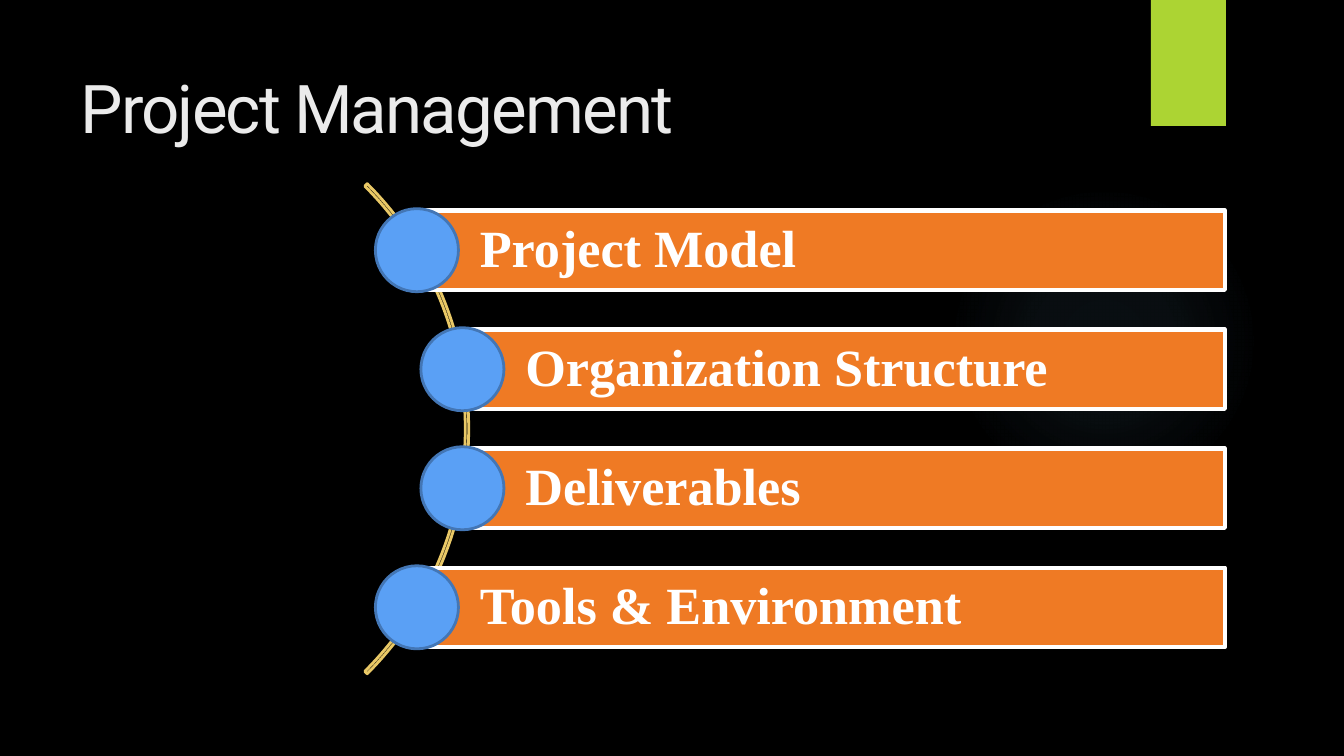
from lxml import etree
from pptx import Presentation
from pptx.dml.color import RGBColor
from pptx.enum.shapes import MSO_SHAPE
from pptx.enum.text import MSO_ANCHOR, MSO_AUTO_SIZE, PP_ALIGN
from pptx.oxml import parse_xml
from pptx.oxml.ns import nsdecls
from pptx.util import Cm, Pt

RECT, OVAL, ARC = MSO_SHAPE.RECTANGLE, MSO_SHAPE.OVAL, MSO_SHAPE.BLOCK_ARC
MIDDLE, LEFT, NO_FIT = MSO_ANCHOR.MIDDLE, PP_ALIGN.LEFT, MSO_AUTO_SIZE.NONE

TITLE = "Project Management"
INNER_X, OUTER_X = 7.88, 8.74
TOPICS = [
    ("Project Model", INNER_X),
    ("Organization Structure", OUTER_X),
    ("Deliverables", OUTER_X),
    ("Tools & Environment", INNER_X),
]
GLOW_STOPS = [(0, 7), (36, 6), (69, 0)]

THEME = {
    "background": "000000", "title": "EBEBEB", "accent": "ACD433", "glow": "7AC4F0",
    "arc": "E9C866", "bar": "EF7A24", "bar_line": "FFFFFF", "bar_text": "FFFFFF",
    "dot": "5AA0F5", "dot_line": "4376B5",
    "title_font": "Roboto", "title_size": 36,
    "bar_font": "Times New Roman", "bar_size": 28,
}

FIRST_Y, PITCH = 4.73, 2.25
BAR_RIGHT, BAR_H = 23.15, 1.5
DOT = 1.57
ARC_X, ARC_SIZE = 2.31, 13.1


def color(name):
    return RGBColor.from_string(THEME[name])


def add_shape(s, kind, x, y, w, h, fill=None, line=None, width=1.5):
    sp = s.shapes.add_shape(kind, Cm(x), Cm(y), Cm(w), Cm(h))
    sp.shadow.inherit = False
    if fill:
        sp.fill.solid()
        sp.fill.fore_color.rgb = color(fill)
    else:
        sp.fill.background()
    if line:
        sp.line.color.rgb = color(line)
        sp.line.width = Pt(width)
    else:
        sp.line.fill.background()
    return sp


def add_glow(s, x, y, size):
    sp = add_shape(s, OVAL, x, y, size, size)
    stops = "".join(
        f'<a:gs pos="{pos * 1000}"><a:srgbClr val="{THEME["glow"]}">'
        f'<a:alpha val="{alpha * 1000}"/></a:srgbClr></a:gs>'
        for pos, alpha in GLOW_STOPS
    )
    gradient = parse_xml(
        f'<a:gradFill {nsdecls("a")}><a:gsLst>{stops}</a:gsLst><a:path path="circle">'
        '<a:fillToRect l="50000" t="50000" r="50000" b="50000"/></a:path></a:gradFill>'
    )
    spPr = sp.fill._xPr
    spPr.replace(spPr.find(etree.QName(gradient.nsmap["a"], "noFill")), gradient)


def style_text(tf, font, size, fill, bold=False):
    tf.word_wrap = True
    tf.auto_size = NO_FIT
    tf.vertical_anchor = MIDDLE
    p = tf.paragraphs[0]
    p.alignment = LEFT
    r = p.runs[0]
    r.font.name = THEME[font]
    r.font.size = Pt(THEME[size])
    r.font.bold = bold
    r.font.color.rgb = color(fill)
    return p


def add_title(s):
    title = s.shapes.title
    title.left, title.top, title.width, title.height = Cm(1.27), Cm(0.8), Cm(21.16), Cm(2.44)
    title.text_frame.text = TITLE
    p = style_text(title.text_frame, "title_font", "title_size", "title")
    p.runs[0].font._element.set("spc", "-100")


def add_arc(s):
    center_y = FIRST_Y + PITCH * (len(TOPICS) - 1) / 2
    arc = add_shape(s, ARC, ARC_X - ARC_SIZE / 2, center_y - ARC_SIZE / 2,
                    ARC_SIZE, ARC_SIZE, line="arc")
    for i, value in enumerate((189, 27, 0.005)):
        arc.adjustments[i] = value


def add_topic(s, text, x, y):
    bar = add_shape(s, RECT, x, y - BAR_H / 2, BAR_RIGHT - x, BAR_H, "bar", "bar_line", 2.25)
    tf = bar.text_frame
    tf.text = text
    tf.margin_left = Cm(1.19)
    tf.margin_top = tf.margin_right = tf.margin_bottom = Cm(0.2)
    p = style_text(tf, "bar_font", "bar_size", "bar_text", bold=True)
    p.line_spacing = 0.9
    add_shape(s, OVAL, x - DOT / 2, y - DOT / 2, DOT, DOT, "dot", "dot_line")


def main():
    prs = Presentation()
    prs.slide_width, prs.slide_height = Cm(25.4), Cm(14.29)
    s = prs.slides.add_slide(prs.slide_layouts[5])
    s.background.fill.solid()
    s.background.fill.fore_color.rgb = color("background")
    add_glow(s, 17.93, 3.51, 5.87)
    add_shape(s, RECT, 21.75, 0, 1.42, 2.38, "accent")
    add_title(s)
    add_arc(s)
    for i, (text, x) in enumerate(TOPICS):
        add_topic(s, text, x, FIRST_Y + i * PITCH)
    prs.save("out.pptx")


if __name__ == "__main__":
    main()
